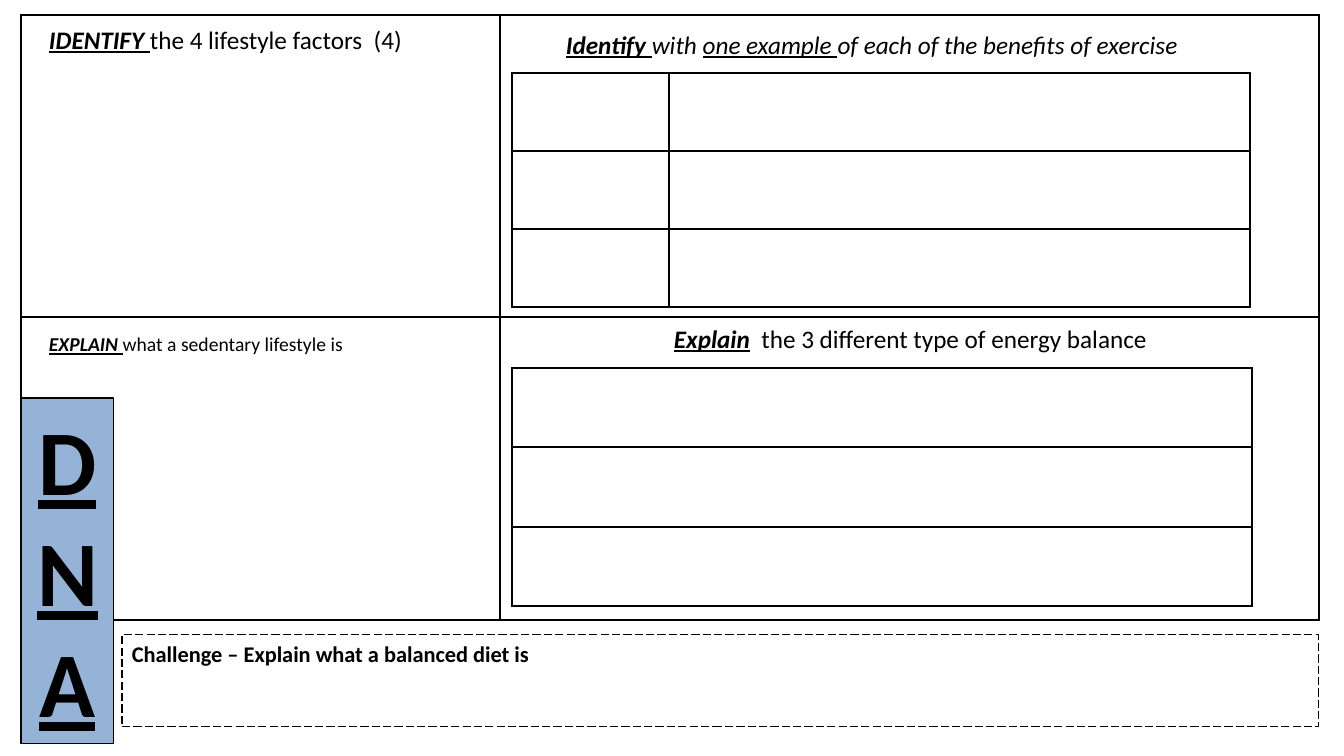
import pptx
import pptx.util
import pptx.dml.color
import pptx.enum.dml
import pptx.enum.shapes
import pptx.enum.text
import pptx.oxml

SCALE = 914400 / 100.8  # EMU in one px
COLOURS = {"ink": "000000", "paper": "FFFFFF", "banner": "95B3D7"}
FONT = "Calibri"
NAMESPACE = "http://schemas.openxmlformats.org/drawingml/2006/main"


def px(length):
    return pptx.util.Emu(round(length * SCALE))


def colour(name):
    return pptx.dml.color.RGBColor.from_string(COLOURS[name])


def write(para, text, size=18, bold=False, italic=False, underline=False):
    span = para.add_run()
    span.text = text
    font = span.font
    font.name, font.size = FONT, pptx.util.Pt(size)
    font.bold, font.italic, font.underline = bold, italic, underline
    font.color.rgb = colour("ink")


def set_frame(shape, anchor=pptx.enum.text.MSO_ANCHOR.TOP, align=pptx.enum.text.PP_ALIGN.LEFT):
    frame = shape.text_frame
    frame.word_wrap = True
    frame.auto_size = pptx.enum.text.MSO_AUTO_SIZE.NONE
    frame.vertical_anchor = anchor
    para = frame.paragraphs[0]
    para.alignment = align
    return para


def outline(shape):
    shape.line.color.rgb = colour("ink")
    shape.line.width = pptx.util.Pt(0.75)


def add_grid(page, left, top, columns, rows):
    """Empty white table with thin black borders."""
    frame = page.shapes.add_table(len(rows), len(columns), px(left), px(top),
                                  px(sum(columns)), px(sum(rows)))
    table = frame.table
    table.first_row = table.horz_banding = False
    for column, width in zip(table.columns, columns):
        column.width = px(width)
    for row, height in zip(table.rows, rows):
        row.height = px(height)
    for cell in table.iter_cells():
        cell.fill.solid()
        cell.fill.fore_color.rgb = colour("paper")
        properties = cell.fill._xPr
        for index, side in enumerate("LRTB"):
            properties.insert(index, pptx.oxml.parse_xml(
                f'<a:ln{side} xmlns:a="{NAMESPACE}" w="12700"><a:solidFill>'
                f'<a:srgbClr val="{COLOURS["ink"]}"/></a:solidFill></a:ln{side}>'))


def add_prompt(page, left, top, width, spans, size=18):
    """One-line question; spans are (text, format) pairs."""
    box = page.shapes.add_textbox(px(left), px(top), px(width), px(40))
    para = set_frame(box)
    for text, style in spans:
        write(para, text, size=size, **style)


def add_questions(page, left, top):
    """Four question areas and their answer grids."""
    command = {"bold": True, "italic": True, "underline": True}
    add_grid(page, left, top, [479, 819], [302, 303])

    # Left column
    add_prompt(page, left + 18, top + 4, 550,
               [("IDENTIFY ", command), ("the 4 lifestyle factors  (4)", {})])
    add_prompt(page, left + 18, top + 312, 550,
               [("EXPLAIN ", command), ("what a sedentary lifestyle is", {})], size=14)

    # Right column
    add_prompt(page, left + 535, top + 9, 719,
               [("Identify ", command), ("with ", {"italic": True}),
                ("one example ", {"italic": True, "underline": True}),
                ("of each of the benefits of exercise", {"italic": True})])
    add_prompt(page, left + 643, top + 303, 550,
               [("Explain", command), ("  the 3 different type of energy balance", {})])
    add_grid(page, left + 491, top + 58, [157, 581], [78] * 3)
    add_grid(page, left + 491, top + 353, [740], [79, 80, 79])


def add_banner(page, left, top, width, height):
    """Narrow title whose letters wrap one to a line."""
    title = page.shapes.title
    page.shapes.element.append(title.element)  # bring to front
    title.left, title.top, title.width, title.height = map(px, (left, top, width, height))
    title.fill.solid()
    title.fill.fore_color.rgb = colour("banner")
    outline(title)
    para = set_frame(title, align=pptx.enum.text.PP_ALIGN.CENTER)
    write(para, "DNA", size=66, bold=True, underline=True)


def add_challenge(page, left, top, width, height):
    """Dashed box along the bottom."""
    box = page.shapes.add_shape(pptx.enum.shapes.MSO_SHAPE.RECTANGLE,
                                px(left), px(top), px(width), px(height))
    box.shadow.inherit = False
    box.fill.background()
    outline(box)
    box.line.dash_style = pptx.enum.dml.MSO_LINE.LONG_DASH
    write(set_frame(box), "Challenge – Explain what a balanced diet is", size=16, bold=True)


def main():
    deck = pptx.Presentation()
    deck.slide_width, deck.slide_height = px(1344), px(756)
    page = deck.slides.add_slide(deck.slide_layouts.get_by_name("Title Only"))
    add_questions(page, 21, 15)
    add_banner(page, 21, 398, 93, 346)
    add_challenge(page, 122, 635, 1197, 92)
    deck.save("out.pptx")


if __name__ == "__main__":
    main()
